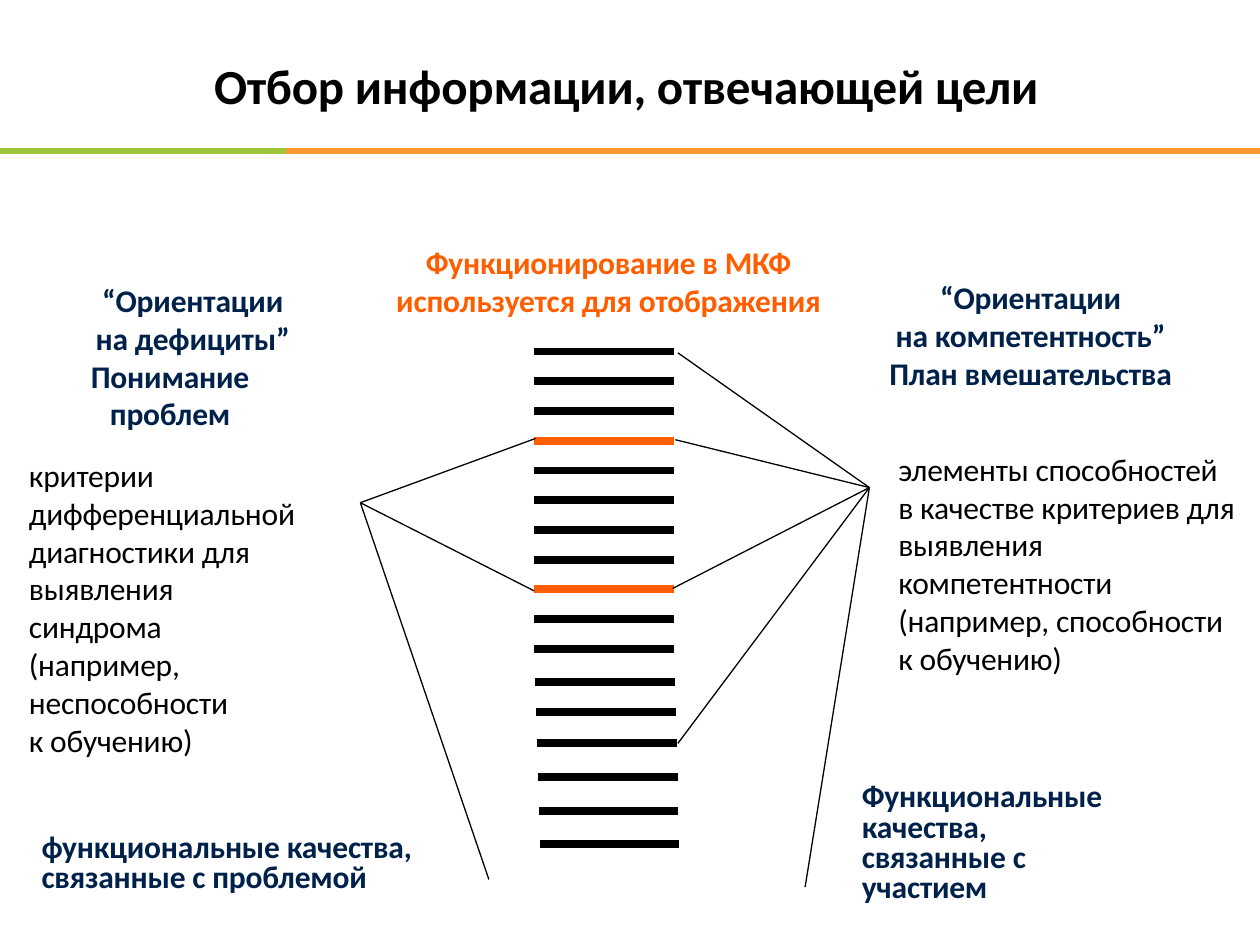
from lxml.etree import SubElement
from pptx import Presentation
from pptx.dml.color import RGBColor
from pptx.enum.shapes import MSO_CONNECTOR
from pptx.enum.text import PP_ALIGN
from pptx.oxml.ns import qn
from pptx.util import Inches, Pt

BLACK, NAVY, ORANGE = "000000", "00224A", "FF5E00"
RULE_ORANGE, RULE_GREEN = "FF9933", "9EC539"


def color(hex_string):
    return RGBColor.from_string(hex_string)


def write(paragraph, text, size=18, bold=False, fill=BLACK, align=PP_ALIGN.LEFT,
          spacing=None, indent=0):
    """Fill a paragraph; a vertical tab in the text is a line break."""
    paragraph.text = text
    paragraph.alignment = align
    if spacing:
        paragraph.line_spacing = spacing
    if indent:
        paragraph._p.get_or_add_pPr().set("marL", str(Inches(indent)))
    for run in paragraph.runs:
        run.font.name = "Calibri"
        run.font.size = Pt(size)
        run.font.bold = bold
        run.font.color.rgb = color(fill)
        run._r.get_or_add_rPr().set("spc", "-10")


class Page:
    """Slide on a grid of 100 columns by 75 rows."""

    def __init__(self, deck):
        self.slide = deck.slides.add_slide(deck.slide_layouts[6])
        self.cell = deck.slide_width / 100

    def at(self, *cells):
        return [round(n * self.cell) for n in cells]

    def line(self, start, end, fill=BLACK, width=0.75):
        connector = self.slide.shapes.add_connector(
            MSO_CONNECTOR.STRAIGHT, *self.at(*start, *end))
        connector.line.color.rgb = color(fill)
        connector.line.width = Pt(width)
        SubElement(connector._element.spPr, qn("a:effectLst"))

    def text(self, box, *paragraphs, indents=(), **style):
        frame = self.slide.shapes.add_textbox(*self.at(*box)).text_frame
        frame.word_wrap = True
        frame.margin_left = frame.margin_right = 0
        frame.margin_top = frame.margin_bottom = 0
        for i, words in enumerate(paragraphs):
            paragraph = frame.add_paragraph() if i else frame.paragraphs[0]
            indent = indents[i] if i < len(indents) else 0
            write(paragraph, words, indent=indent, **style)


def main():
    deck = Presentation()
    deck.slide_width, deck.slide_height = Inches(10), Inches(7.5)
    page = Page(deck)
    heading = dict(bold=True, fill=NAVY, align=PP_ALIGN.CENTER)
    footing = dict(bold=True, fill=NAVY, spacing=0.8)

    # Title and two-colour rule
    page.text((17, 4.4, 68, 4.9), "Отбор информации, отвечающей цели", size=28, bold=True)
    page.line((17.2, 12), (100, 12), RULE_ORANGE, 3.62)
    page.line((0, 12), (22.7, 12), RULE_GREEN, 3.62)

    # Ladder of bars: even steps at first, wider and drifting right below
    bar_rows = [27.9 + 2.36 * step for step in range(11)]
    bar_rows += [54.1, 56.5, 59, 61.7, 64.4, 67]
    for i, row in enumerate(bar_rows):
        left = 42.4 + 0.07 * max(0, i - 10)
        page.line((left, row), (left + 11.1, row), ORANGE if i in (3, 8) else BLACK, 4.5)

    # Rays from the deficit side and from the competence side
    deficit, competence = (28.6, 39.9), (69, 38.7)
    for target in [(42.5, 34.8), (42.4, 46.9), (38.8, 69.8)]:
        page.line(deficit, target)
    for target in [(53.8, 28), (53.6, 34.9), (53.4, 46.7), (53.8, 59), (63.9, 70.4)]:
        page.line(competence, target)

    # Centre heading
    page.text((30.3, 19.3, 36, 6.2), "Функционирование в МКФ\vиспользуется для отображения",
              bold=True, fill=ORANGE, align=PP_ALIGN.CENTER)

    # Deficit side
    page.text((2.5, 22.3, 22, 12.2), "“Ориентации\vна дефициты”", "Понимание\vпроблем",
              indents=(0.36,), **heading)
    page.text((2.3, 36.2, 26, 24.4), "критерии\vдифференциальной\vдиагностики для",
              "выявления\vсиндрома", "(например,", "неспособности\vк обучению)")
    page.text((3.3, 66.2, 32, 5), "функциональные качества,\vсвязанные с проблемой", **footing)

    # Competence side
    page.text((67.8, 22.1, 28, 9.2), "“Ориентации", "на компетентность”",
              "План вмешательства", **heading)
    page.text((71.3, 35.7, 28, 18.3), "элементы способностей\vв качестве критериев для\vвыявления",
              "компетентности", "(например, способности\vк обучению)")
    page.text((68.4, 62.2, 24, 9.8), "Функциональные\vкачества,",
              "связанные с\vучастием", **footing)

    deck.save("out.pptx")


if __name__ == "__main__":
    main()
